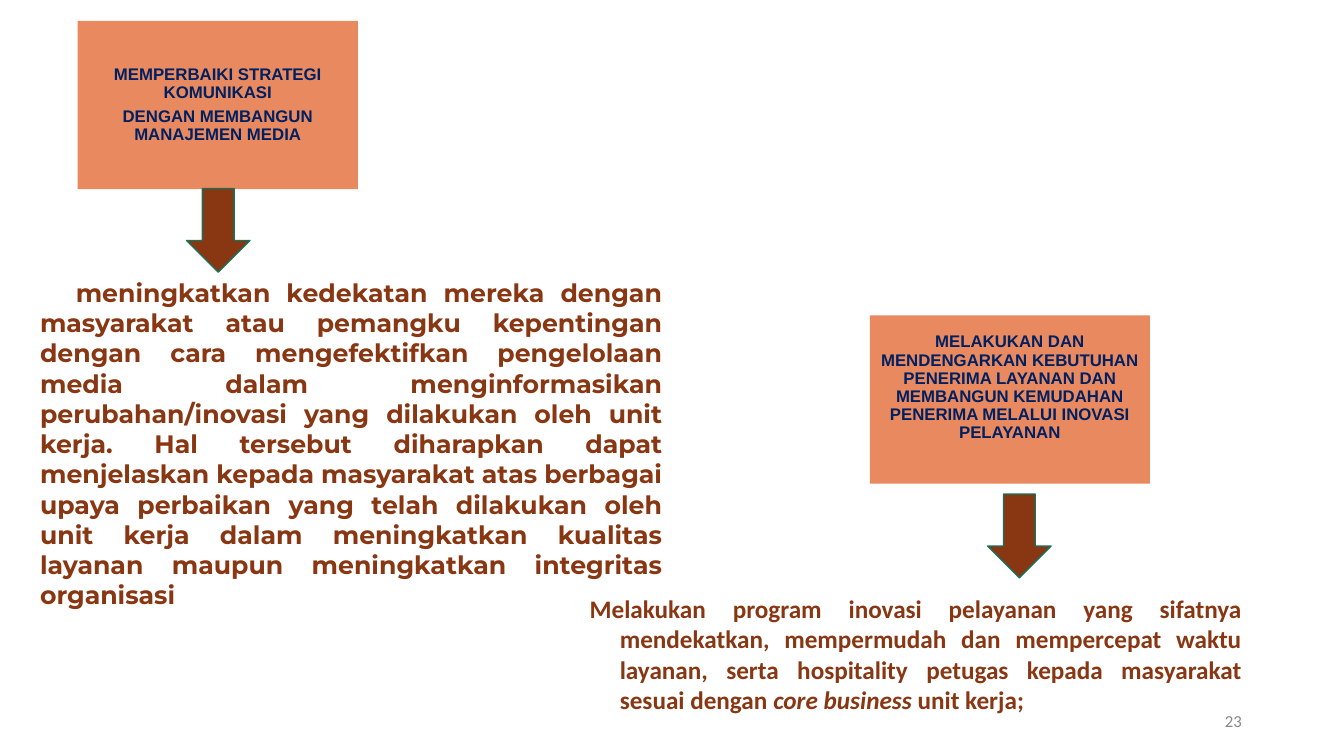
from pptx import Presentation
from pptx.dml.color import RGBColor
from pptx.enum.shapes import MSO_SHAPE as Shape
from pptx.enum.text import MSO_ANCHOR as Anchor, PP_ALIGN as Align
from pptx.util import Cm, Pt

COLORS = {
    "box": "E98960",
    "heading": "002060",
    "brown": "893713",
    "outline": "157259",
    "number": "898989",
}
HANGING = 0.76


def color(name):
    return RGBColor.from_string(COLORS[name])


def write(paragraph, text, font="Calibri", size=18, ink="brown", bold=True,
          italic=False, align=Align.JUSTIFY):
    """Add one formatted run to a paragraph."""
    paragraph.alignment = align
    run = paragraph.add_run()
    run.text = text
    run.font.name = font
    run.font.size = Pt(size)
    run.font.bold = bold
    run.font.italic = italic
    run.font.color.rgb = color(ink)


class StrategySlide:
    box_size = (7.06, 4.24)
    arrow_size = (1.6, 2.11)

    def __init__(self, presentation):
        self.slide = presentation.slides.add_slide(presentation.slide_layouts[6])

    def add_preset(self, preset, left, top, size, fill):
        shape = self.slide.shapes.add_shape(
            preset, Cm(left), Cm(top), *map(Cm, size))
        shape.shadow.inherit = False
        shape.fill.solid()
        shape.fill.fore_color.rgb = color(fill)
        return shape

    def heading_box(self, left, top, lines, bottom_inset=0.13):
        shape = self.add_preset(Shape.RECTANGLE, left, top, self.box_size, "box")
        shape.line.fill.background()
        frame = shape.text_frame
        frame.word_wrap = True
        frame.vertical_anchor = Anchor.MIDDLE
        frame.margin_left = frame.margin_right = frame.margin_top = Cm(0.13)
        frame.margin_bottom = Cm(bottom_inset)
        for index, line in enumerate(lines):
            paragraph = frame.add_paragraph() if index else frame.paragraphs[0]
            paragraph.line_spacing = 0.9
            paragraph.space_after = Pt(4.2)
            write(paragraph, line, font="Arial", size=12, ink="heading",
                  align=Align.CENTER)

    def down_arrow(self, left, top):
        shape = self.add_preset(Shape.DOWN_ARROW, left, top, self.arrow_size, "brown")
        shape.line.color.rgb = color("outline")
        shape.line.width = Pt(1)

    def text_box(self, left, top, width, height, runs, first_indent=None,
                 anchor=Anchor.TOP):
        box = self.slide.shapes.add_textbox(Cm(left), Cm(top), Cm(width), Cm(height))
        frame = box.text_frame
        frame.word_wrap = True
        frame.vertical_anchor = anchor
        paragraph = frame.paragraphs[0]
        if first_indent is not None:
            properties = paragraph._p.get_or_add_pPr()
            properties.set("marL", str(Cm(HANGING)))
            properties.set("indent", str(Cm(first_indent)))
        for text, style in runs:
            write(paragraph, text, **style)


def main():
    presentation = Presentation()
    presentation.slide_width = Cm(33.87)
    presentation.slide_height = Cm(19.05)
    page = StrategySlide(presentation)

    # Slide number
    page.text_box(23.93, 17.65, 7.62, 1.02,
                  [("23", dict(size=12, ink="number", bold=False, align=Align.RIGHT))],
                  anchor=Anchor.MIDDLE)

    # Communication strategy
    page.heading_box(1.96, 0.53, ["MEMPERBAIKI STRATEGI KOMUNIKASI",
                                  "DENGAN MEMBANGUN MANAJEMEN MEDIA"])
    page.text_box(0, 6.86, 16.94, 8.71, [(
        "meningkatkan kedekatan mereka dengan masyarakat atau pemangku "
        "kepentingan dengan cara mengefektifkan pengelolaan media dalam "
        "menginformasikan perubahan/inovasi yang dilakukan oleh unit kerja. "
        "Hal tersebut diharapkan dapat menjelaskan kepada masyarakat atas "
        "berbagai upaya perbaikan yang telah dilakukan oleh unit kerja dalam "
        "meningkatkan kualitas layanan maupun meningkatkan integritas organisasi",
        dict(font="Montserrat"))], first_indent=0.9)
    page.down_arrow(4.7, 4.75)

    # Service innovation
    page.text_box(14.61, 14.83, 16.94, 3.33, [
        ("Melakukan program inovasi pelayanan yang sifatnya mendekatkan, "
         "mempermudah dan mempercepat waktu layanan, serta hospitality petugas "
         "kepada masyarakat sesuai dengan ", {}),
        ("core business", dict(italic=True)),
        (" unit kerja;", {}),
    ], first_indent=-HANGING)
    page.heading_box(21.92, 7.95, [
        "MELAKUKAN DAN MENDENGARKAN KEBUTUHAN PENERIMA LAYANAN DAN "
        "MEMBANGUN KEMUDAHAN PENERIMA MELALUI INOVASI PELAYANAN"],
        bottom_inset=0.72)
    page.down_arrow(24.89, 12.45)

    presentation.save("out.pptx")


if __name__ == "__main__":
    main()
